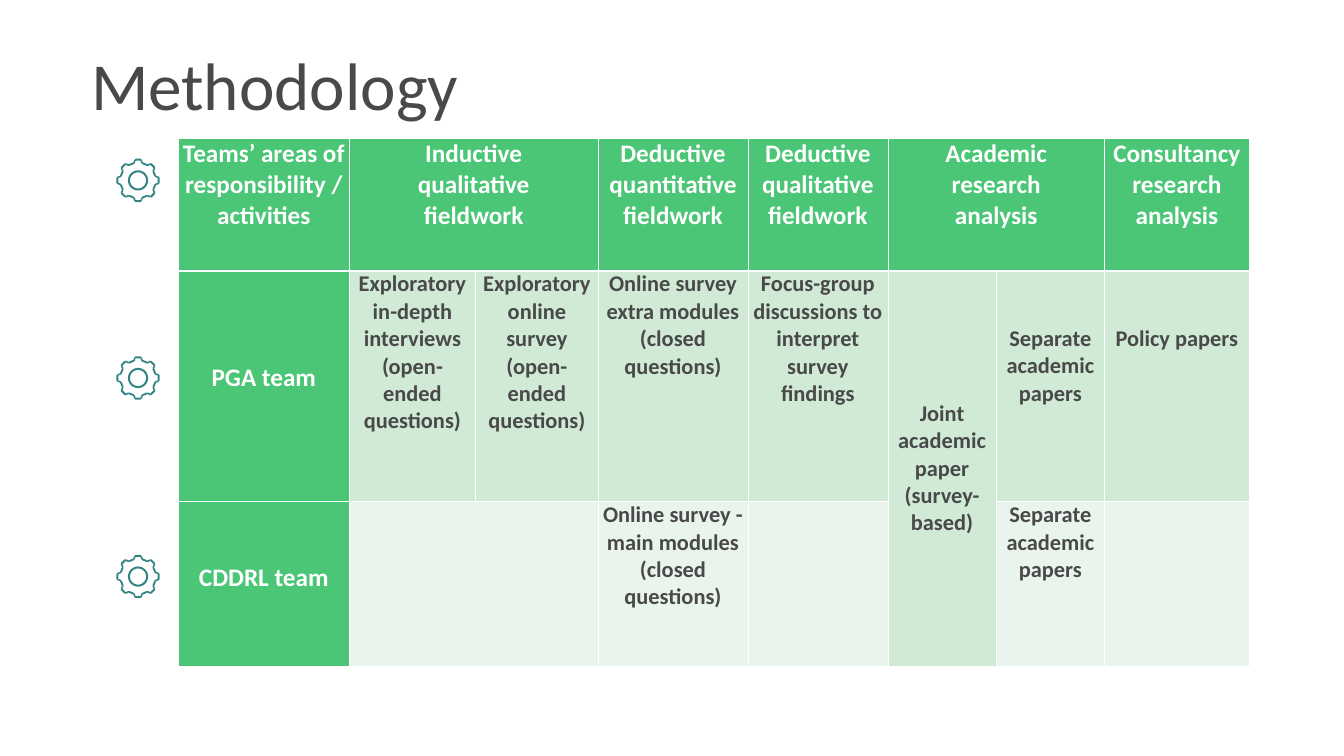
"""Build the Methodology slide: a table of team responsibilities with gear icons."""
import math

from lxml import etree
from pptx import Presentation
from pptx.dml.color import RGBColor
from pptx.enum import text
from pptx.oxml import ns
from pptx.util import Inches, Pt

COLORS = {
    "title": "494949",
    "white": "FFFFFF",
    "gear": "328582",
    "header": "4BC676",
    "upper": "D0EAD6",
    "lower": "E9F5EC",
}
FONT = "Calibri"


def add_text(para, content, size, color, bold=False):
    for index, line in enumerate(content.split("\n")):
        if index:
            para.add_line_break()
        span = para.add_run()
        span.text = line
        span.font.name = FONT
        span.font.size = Pt(size)
        span.font.bold = bold
        span.font.color.rgb = RGBColor.from_string(COLORS[color])


def add_border(cell, side, width):
    line = etree.SubElement(cell._tc.get_or_add_tcPr(), ns.qn(f"a:ln{side}"), w=str(Pt(width)))
    fill = etree.SubElement(line, ns.qn("a:solidFill"))
    etree.SubElement(fill, ns.qn("a:srgbClr"), val=COLORS["white"])


deck = Presentation()
deck.slide_width, deck.slide_height = Inches(26.67), Inches(15)
page = deck.slides.add_slide(deck.slide_layouts[6])

title = page.shapes.add_textbox(Inches(1.71), Inches(0.81), Inches(7.57), Inches(1.72))
title.text_frame.word_wrap = False
add_text(title.text_frame.paragraphs[0], "Methodology", 96, "title")

outer_tooth = [(0.36, -0.09), (0.4, -0.08), (0.43, -0.05), (0.43, 0.05), (0.4, 0.08), (0.36, 0.09)]
inner_tooth = [(0.32, -0.09), (0.35, -0.06), (0.39, -0.05), (0.39, 0.05), (0.35, 0.06), (0.32, 0.09)]
outlines = []
for tooth in (outer_tooth, inner_tooth):
    outlines.append([
        (x * math.cos(turn) - y * math.sin(turn), x * math.sin(turn) + y * math.cos(turn))
        for turn in (math.radians(45 * step) for step in range(8))
        for x, y in tooth
    ])
for radius in (0.2, 0.16):
    angles = [math.radians(10 * step) for step in range(36)]
    outlines.append([(radius * math.cos(angle), radius * math.sin(angle)) for angle in angles])

for center_y in (3.58, 7.5, 11.44):
    contours = [[(Inches(2.74 + x), Inches(center_y + y)) for x, y in outline] for outline in outlines]
    builder = page.shapes.build_freeform(*contours[0][0])
    builder.add_line_segments(contours[0][1:], close=True)
    for contour in contours[1:]:
        builder.move_to(*contour[0])
        builder.add_line_segments(contour[1:], close=True)
    gear = builder.convert_to_shape()
    gear.shadow.inherit = False
    gear.fill.solid()
    gear.fill.fore_color.rgb = RGBColor.from_string(COLORS["gear"])
    gear.line.fill.background()

widths = [3.39, 2.51, 2.43, 2.97, 2.78, 2.15, 2.15, 2.87]
heights = [2.62, 4.58, 3.27]
rows = [
    ["Teams’ areas of responsibility / activities", "Inductive\nqualitative\nfieldwork", "",
     "Deductive quantitative fieldwork", "Deductive qualitative fieldwork",
     "Academic\nresearch\nanalysis", "", "Consultancy research analysis"],
    ["PGA team", "Exploratory\nin-depth interviews (open-ended questions)",
     "Exploratory online survey (open-ended questions)",
     "Online survey extra modules (closed questions)",
     "Focus-group discussions to interpret survey findings",
     "Joint academic paper (survey-based)", "Separate academic papers", "Policy papers"],
    ["CDDRL team", "", "", "Online survey - main modules\n(closed questions)", "", "",
     "Separate academic papers", ""],
]
top_margins = {(1, 0): 1.83, (2, 0): 1.22, (1, 6): 1.08, (1, 7): 1.08}
merges = [((0, 1), (0, 2)), ((0, 5), (0, 6)), ((1, 5), (2, 5)), ((2, 1), (2, 2))]

frame = page.shapes.add_table(
    len(rows), len(widths), Inches(3.54), Inches(2.75), Inches(sum(widths)), Inches(sum(heights)))
table = frame.table
table.horz_banding = False
for column, width in zip(table.columns, widths):
    column.width = Inches(width)
for row, height in zip(table.rows, heights):
    row.height = Inches(height)

for row_index, row in enumerate(rows):
    for column_index, content in enumerate(row):
        cell = table.cell(row_index, column_index)
        is_header = row_index == 0 or column_index == 0
        cell.margin_left = cell.margin_right = Inches(0.07)
        cell.margin_top = Inches(top_margins.get((row_index, column_index), 0))
        cell.margin_bottom = 0
        for side in "LRTB":
            add_border(cell, side, 3 if row_index == 0 and side == "B" else 1)
        cell.fill.solid()
        shade = "header" if is_header else ("upper", "lower")[row_index - 1]
        cell.fill.fore_color.rgb = RGBColor.from_string(COLORS[shade])
        if content:
            para = cell.text_frame.paragraphs[0]
            para.alignment = text.PP_ALIGN.CENTER
            add_text(para, content, 36 if is_header else 32, "white" if is_header else "title", True)

for first, last in merges:
    table.cell(*first).merge(table.cell(*last))
table.cell(1, 5).vertical_anchor = text.MSO_ANCHOR.MIDDLE

deck.save("out.pptx")
